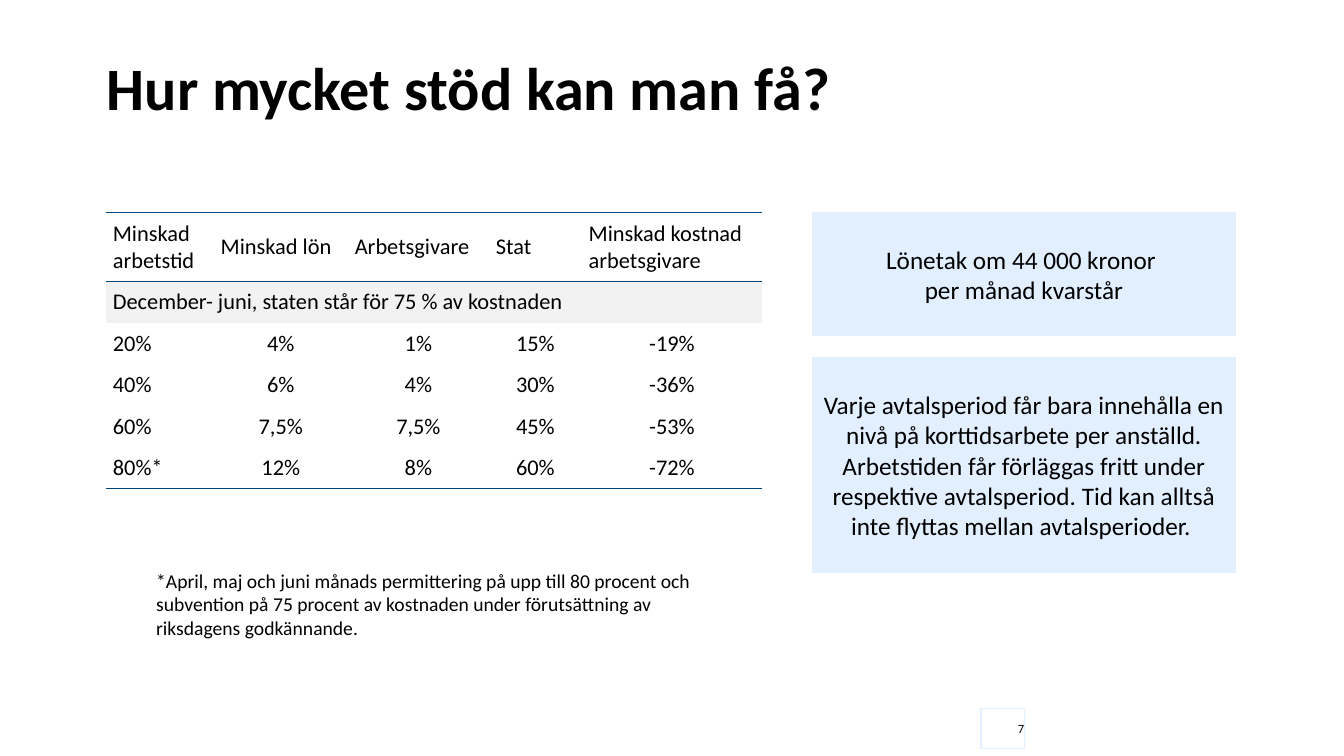
from dataclasses import dataclass
from lxml.etree import SubElement
from pptx import Presentation
from pptx.dml.color import RGBColor
from pptx.enum.shapes import MSO_SHAPE
from pptx.enum.text import MSO_ANCHOR, MSO_AUTO_SIZE, PP_ALIGN
from pptx.oxml.ns import qn
from pptx.slide import Slide
from pptx.table import _Cell as Cell
from pptx.text.text import TextFrame
from pptx.util import Inches, Pt

COLORS = {"text": "000000", "pale": "E1EFFF", "rule": "004376",
          "band": "F2F2F2", "white": "FFFFFF"}
FONT = "Calibri"
PLAIN = "{2D5ABB26-0587-4C30-8999-92F81FD0307C}"
WIDTHS = [1.07, 1.33, 1.4, 0.92, 1.79]
HEIGHTS = [0.62] + [0.37] * 5
ROWS = [
    ["Minskad arbetstid", "Minskad lön", "Arbetsgivare", "Stat",
     "Minskad kostnad arbetsgivare"],
    ["December- juni, staten står för 75 % av kostnaden"],
    ["20%", "4%", "1%", "15%", "-19%"],
    ["40%", "6%", "4%", "30%", "-36%"],
    ["60%", "7,5%", "7,5%", "45%", "-53%"],
    ["80%*", "12%", "8%", "60%", "-72%"],
]
NOTE = ("*April, maj och juni månads permittering på upp till 80 procent och "
        "subvention på 75 procent av kostnaden under förutsättning av "
        "riksdagens godkännande.")


@dataclass
class Panel:
    """A filled rectangle with text."""
    box: tuple[float, float, float, float]
    text: str
    size: float = 18
    fill: str = "pale"
    line: float = 1
    align: PP_ALIGN = PP_ALIGN.CENTER
    inset: float = 0.1


PANELS = [
    Panel((9.73, 7.03, 0.43, 0.4), "7", 9, "white", 0.75, PP_ALIGN.RIGHT, 0),
    Panel((8.06, 2.11, 4.19, 1.22),
          "Lönetak om 44 000 kronor \nper månad kvarstår"),
    Panel((8.06, 3.55, 4.19, 2.13),
          "Varje avtalsperiod får bara innehålla en nivå på korttidsarbete per "
          "anställd. Arbetstiden får förläggas fritt under respektive "
          "avtalsperiod. Tid kan alltså inte flyttas mellan avtalsperioder. "),
]


def shade(name: str) -> RGBColor:
    """Return a named colour."""
    return RGBColor.from_string(COLORS[name])


def write(frame: TextFrame, text: str, size: float,
          align: PP_ALIGN = PP_ALIGN.LEFT, bold: bool = False) -> None:
    """Set the text of a frame and format its runs."""
    frame.text = text
    frame.word_wrap = True
    for para in frame.paragraphs:
        para.alignment = align
        for run in para.runs:
            font = run.font
            font.name, font.size, font.bold = FONT, Pt(size), bold
            font.color.rgb = shade("text")


def pad(frame: TextFrame, inset: float) -> None:
    """Give a frame equal margins."""
    frame.margin_left = frame.margin_right = Inches(inset)
    frame.margin_top = frame.margin_bottom = Inches(inset)


def add_title(slide: Slide, text: str) -> None:
    """Place and fill the title."""
    title = slide.shapes.title
    title.left, title.top = Inches(1.06), Inches(0.09)
    title.width, title.height = Inches(9.4), Inches(1.14)
    frame = title.text_frame
    write(frame, text, 43, bold=True)
    pad(frame, 0)
    frame.auto_size = MSO_AUTO_SIZE.NONE
    frame.vertical_anchor = MSO_ANCHOR.BOTTOM
    frame.paragraphs[0].line_spacing = 0.9


def add_panel(slide: Slide, panel: Panel) -> None:
    """Draw one panel."""
    shape = slide.shapes.add_shape(MSO_SHAPE.RECTANGLE, *map(Inches, panel.box))
    shape.shadow.inherit = False
    shape.fill.solid()
    shape.fill.fore_color.rgb = shade(panel.fill)
    shape.line.color.rgb = shade("pale")
    shape.line.width = Pt(panel.line)
    frame = shape.text_frame
    write(frame, panel.text, panel.size, panel.align)
    frame.vertical_anchor = MSO_ANCHOR.MIDDLE
    if panel.inset == 0:
        pad(frame, 0)


def add_rule(cell: Cell, side: str) -> None:
    """Draw a border along the top (lnT) or bottom (lnB) of a cell."""
    props = cell._tc.get_or_add_tcPr()
    line = SubElement(props, qn(f"a:{side}"), w=str(Pt(1)))
    fill = SubElement(line, qn("a:solidFill"))
    SubElement(fill, qn("a:srgbClr"), val=COLORS["rule"])


def add_grid(slide: Slide) -> None:
    """Draw the support table."""
    frame = slide.shapes.add_table(len(ROWS), len(WIDTHS), Inches(1.05),
                                   Inches(2.11), Inches(sum(WIDTHS)),
                                   Inches(sum(HEIGHTS)))
    table = frame.table
    table.first_row = table.horz_banding = False
    table._tbl.tblPr.find(qn("a:tableStyleId")).text = PLAIN
    for col, width in zip(table.columns, WIDTHS):
        col.width = Inches(width)
    for row, height in zip(table.rows, HEIGHTS):
        row.height = Inches(height)
    table.cell(1, 0).merge(table.cell(1, len(WIDTHS) - 1))
    for r, texts in enumerate(ROWS):
        for c, text in enumerate(texts):
            cell = table.cell(r, c)
            align = PP_ALIGN.CENTER if r > 1 and c else PP_ALIGN.LEFT
            write(cell.text_frame, text, 16, align)
            cell.vertical_anchor = MSO_ANCHOR.MIDDLE
            cell.margin_left = cell.margin_right = Inches(0.07)
            cell.margin_top = cell.margin_bottom = Inches(0.07)
            if r == 0:
                add_rule(cell, "lnT")
            if r in (0, len(ROWS) - 1):
                add_rule(cell, "lnB")
            if r == 1:
                cell.fill.solid()
                cell.fill.fore_color.rgb = shade("band")
            else:
                cell.fill.background()


def add_note(slide: Slide) -> None:
    """Write the footnote."""
    box = slide.shapes.add_textbox(Inches(1.45), Inches(5.59),
                                   Inches(5.69), Inches(0.81))
    write(box.text_frame, NOTE, 14)
    box.text_frame.auto_size = MSO_AUTO_SIZE.SHAPE_TO_FIT_TEXT


def main() -> None:
    """Build and save the slide."""
    deck = Presentation()
    deck.slide_width, deck.slide_height = Inches(13.33), Inches(7.5)
    slide = deck.slides.add_slide(deck.slide_layouts[5])
    add_title(slide, "Hur mycket stöd kan man få?")
    add_grid(slide)
    for panel in PANELS:
        add_panel(slide, panel)
    add_note(slide)
    deck.save("out.pptx")


if __name__ == "__main__":
    main()
